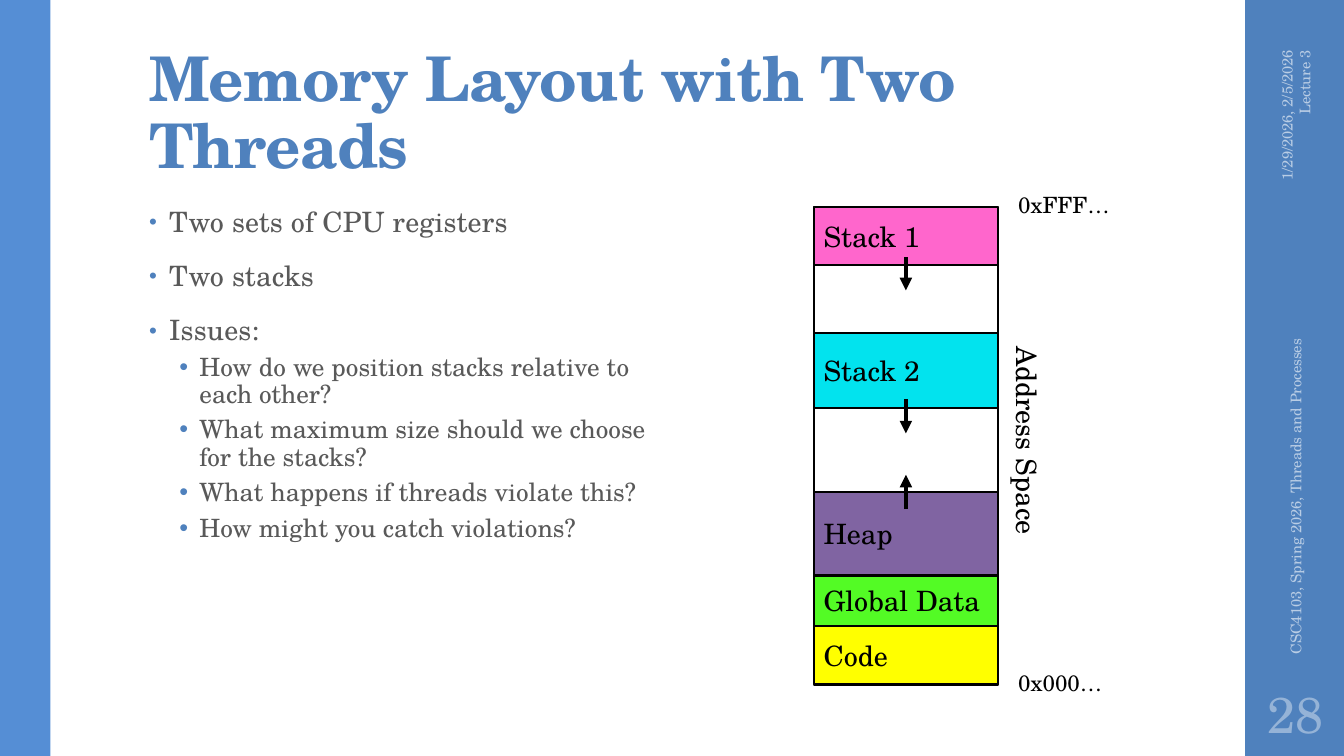
from dataclasses import dataclass

from lxml.etree import SubElement
from pptx import Presentation
from pptx.dml.color import RGBColor
from pptx.enum.shapes import MSO_CONNECTOR, MSO_SHAPE
from pptx.enum.text import MSO_ANCHOR as Anchor, PP_ALIGN as Align
from pptx.oxml.ns import qn
from pptx.util import Inches, Pt


@dataclass(frozen=True)
class Theme:
    font: str = "TeX Gyre Schola"
    accent: str = "4F81BD"
    left_band: str = "558ED5"
    body: str = "595959"
    footer: str = "B9CDE5"
    number: str = "95B3D7"
    black: str = "000000"
    white: str = "FFFFFF"
    code: str = "FFFF00"
    data: str = "53FB25"
    heap: str = "8064A2"
    stack_1: str = "FF66CC"
    stack_2: str = "02E3EE"
    title_size: float = 44
    number_size: float = 36
    text_size: float = 20
    sub_size: float = 18
    address_size: float = 16
    footer_size: float = 10.5


theme = Theme()
deck = Presentation()
deck.slide_width, deck.slide_height = Inches(13.33), Inches(7.5)
page = deck.slides.add_slide(deck.slide_layouts[6])


def add_box(place, fill=None, outlined=False, anchor=Anchor.TOP, wrap=True):
    """Add a filled rectangle, or a text box when there is no fill."""
    lengths = [Inches(value) for value in place]
    if fill:
        box = page.shapes.add_shape(MSO_SHAPE.RECTANGLE, *lengths)
        box.shadow.inherit = False
        box.fill.solid()
        box.fill.fore_color.rgb = RGBColor.from_string(fill)
        if outlined:
            box.line.color.rgb = RGBColor.from_string(theme.black)
            box.line.width = Pt(1.5)
        else:
            box.line.fill.background()
    else:
        box = page.shapes.add_textbox(*lengths)
    box.text_frame.word_wrap = wrap
    box.text_frame.vertical_anchor = anchor
    return box


def write(para, text, size, color, align=Align.LEFT):
    para.text = text
    para.alignment = align
    para.font.name = theme.font
    para.font.size = Pt(size)
    para.font.color.rgb = RGBColor.from_string(color)


# Side bands
add_box((12.35, 0, 1, 7.5), theme.accent)
add_box((0, 0, 0.5, 7.5), theme.left_band)

# Title
title = add_box((1.38, 0.32, 10.6, 1.53), anchor=Anchor.BOTTOM).text_frame
title.margin_top = Inches(0.03)
heading = title.paragraphs[0]
write(heading, "Memory Layout with Two Threads", theme.title_size, theme.accent)
heading.font.bold = True
heading.line_spacing = 0.9
heading.runs[0]._r.get_or_add_rPr().set("spc", "-50")

# Bullets: level and text
bullets = [
    (0, "Two sets of CPU registers"),
    (0, "Two stacks"),
    (0, "Issues:"),
    (1, "How do we position stacks relative to\veach other?"),
    (1, "What maximum size should we choose\vfor the stacks?"),
    (1, "What happens if threads violate this?"),
    (1, "How might you catch violations?"),
]
# Per level: size, line spacing, space before, space after, indent, bullet percent, tracking
levels = [
    (theme.text_size, 0.95, 14, 2, 0.2, 80, 10),
    (theme.sub_size, 0.9, 3, 3, 0.5, 100, 0),
]
body = add_box((1.38, 2, 9.4, 4.76)).text_frame
for index, (level, text) in enumerate(bullets):
    size, spacing, before, after, indent, percent, tracking = levels[level]
    para = body.add_paragraph() if index else body.paragraphs[0]
    para.level = level
    para.line_spacing = spacing
    para.space_before = Pt(before if index else 0)
    para.space_after = Pt(after)
    props = para._p.get_or_add_pPr()
    props.set("marL", str(Inches(indent)))
    props.set("indent", str(Inches(-0.2)))
    bullet_color = SubElement(props, qn("a:buClr"))
    SubElement(bullet_color, qn("a:srgbClr"), val=theme.accent)
    SubElement(props, qn("a:buSzPct"), val=str(percent * 1000))
    SubElement(props, qn("a:buFont"), typeface="Arial")
    SubElement(props, qn("a:buChar"), char="•")
    write(para, text, size, theme.body)
    for span in para.runs:
        span._r.get_or_add_rPr().set("spc", str(tracking))

# Text in the right band
dates = add_box((11.81, 1.09, 2.08, 0.4), anchor=Anchor.MIDDLE)
dates.rotation = 270
date_line = dates.text_frame.paragraphs[0]
write(date_line, "1/29/2026, 2/5/2026", theme.footer_size, theme.footer, Align.RIGHT)
date_line._p.get_or_add_pPr().set("marR", str(Inches(0.15)))
write(dates.text_frame.add_paragraph(), "Lecture 3", theme.footer_size, theme.footer, Align.RIGHT)

course = add_box((10.89, 4.43, 3.92, 0.4), anchor=Anchor.MIDDLE)
course.rotation = 270
write(course.text_frame.paragraphs[0], "CSC4103, Spring 2026, Threads and Processes",
      theme.footer_size, theme.footer)

number = add_box((12.35, 6.75, 1, 0.65), anchor=Anchor.MIDDLE).text_frame
number.margin_left = number.margin_right = Inches(0.05)
write(number.paragraphs[0], "28", theme.number_size, theme.number, Align.CENTER)

# Address space: name, top, height, fill
memory_left, memory_width = 8.07, 1.83
add_box((memory_left, 2.05, memory_width, 4.75), theme.white, outlined=True)
segments = [
    ("Code", 6.21, 0.58, theme.code),
    ("Global Data", 5.71, 0.5, theme.data),
    ("Heap", 4.88, 0.83, theme.heap),
    ("Stack 1", 2.05, 0.58, theme.stack_1),
    ("Stack 2", 3.3, 0.75, theme.stack_2),
]
for name, top, height, fill in segments:
    segment = add_box((memory_left, top, memory_width, height), fill, outlined=True,
                      anchor=Anchor.MIDDLE, wrap=False)
    write(segment.text_frame.paragraphs[0], name, theme.text_size, theme.black)

# Growth arrows: start and end height
arrow_x = Inches(memory_left + memory_width / 2)
for start, end in [(2.55, 2.88), (3.96, 4.3), (5.05, 4.71)]:
    arrow = page.shapes.add_connector(MSO_CONNECTOR.STRAIGHT, arrow_x, Inches(start),
                                      arrow_x, Inches(end))
    arrow.line.color.rgb = RGBColor.from_string(theme.black)
    arrow.line.width = Pt(3)
    SubElement(arrow.line._get_or_add_ln(), qn("a:tailEnd"), type="triangle")
    SubElement(arrow._element.spPr, qn("a:effectLst"))

# Labels: text, place, size, rotation
labels = [
    ("Address Space", (9.14, 4.16, 2.09, 0.44), theme.text_size, 90),
    ("0x000…", (10, 6.59, 1.05, 0.37), theme.address_size, 0),
    ("0xFFF…", (10, 1.85, 1.12, 0.37), theme.address_size, 0),
]
for text, place, size, rotation in labels:
    label = add_box(place, wrap=False)
    label.rotation = rotation
    write(label.text_frame.paragraphs[0], text, size, theme.black)

deck.save("out.pptx")
